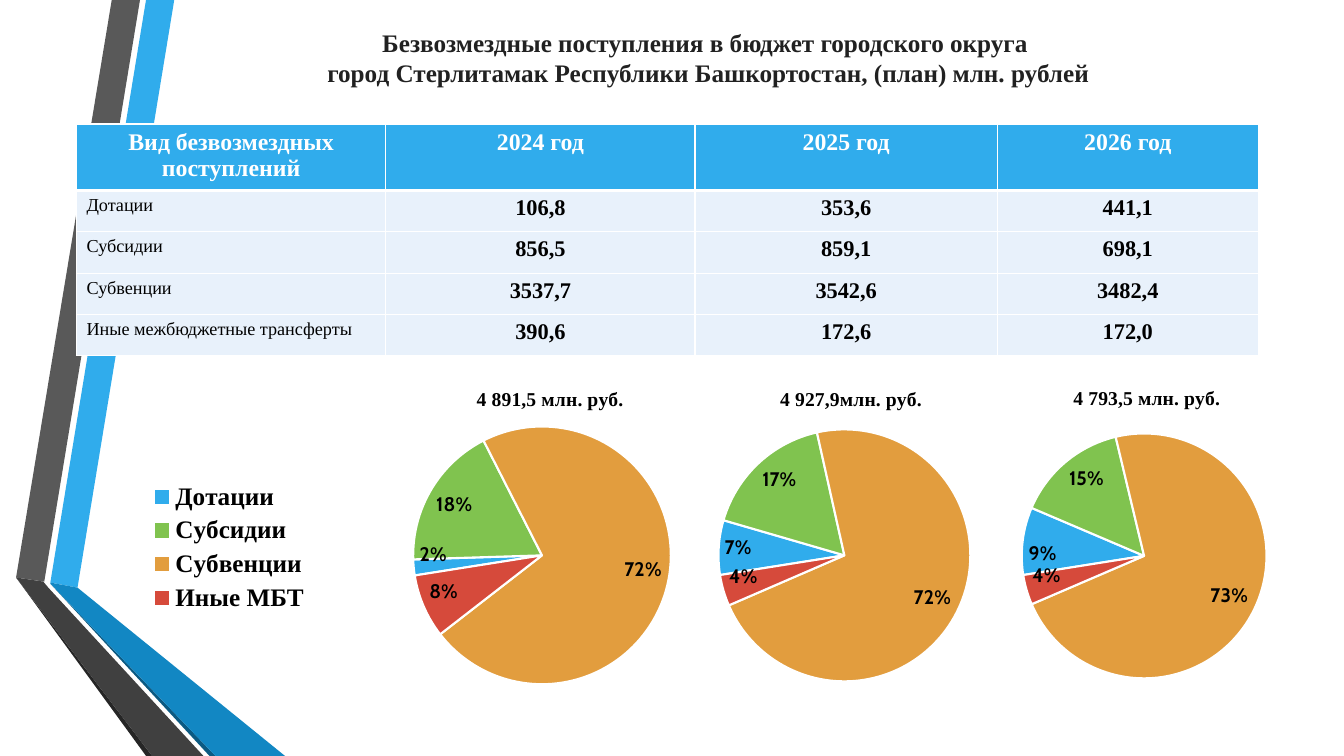
import pptx
import pptx.chart.data
import pptx.dml.color
import pptx.enum.chart
import pptx.enum.text
import pptx.oxml
import pptx.oxml.ns
import pptx.util

Inches = pptx.util.Inches
SERIF = "Times New Roman"
SANS = "Cabin"
COLORS = {
    "white": "FFFFFF", "black": "000000", "title": "212121",
    "blue": "30ACEC", "green": "80C34F", "orange": "E29D3E", "red": "D64A3B",
    "pale": "E8F1FB", "grey": "595959", "dark": "404040", "darkest": "262626",
    "deep_blue": "1287C3", "navy": "0C5A82",
}
SLICES = ["blue", "green", "orange", "red"]
RIBBONS = [
    ("blue", [(0.5, 5.78), (0.77, 5.83), (1.73, 0), (1.45, 0)]),
    ("grey", [(1.39, 0), (1.11, 0), (0.16, 5.73), (0.44, 5.77)]),
    ("darkest", [(0.16, 5.73), (1.45, 7.5), (1.51, 7.5)]),
    ("navy", [(0.5, 5.79), (2.08, 7.5), (2.14, 7.5)]),
    ("deep_blue", [(0.5, 5.79), (2.14, 7.5), (2.83, 7.5), (0.77, 5.83), (0.5, 5.78)]),
    ("dark", [(2.02, 7.5), (0.48, 5.83), (0.43, 5.77), (0.16, 5.73), (1.51, 7.5)]),
]
ROWS = [
    ["Вид безвозмездных поступлений", "2024 год", "2025 год", "2026 год"],
    ["Дотации", "106,8", "353,6", "441,1"],
    ["Субсидии", "856,5", "859,1", "698,1"],
    ["Субвенции", "3537,7", "3542,6", "3482,4"],
    ["Иные межбюджетные трансферты", "390,6", "172,6", "172,0"],
]
NUMBERS = ["1", "2", "3", "4"]
PIES = [
    {"title": "4 891,5 млн. руб.", "shares": [2, 18, 72, 8],
     "names": ["Дотации", "Субсидии", "Субвенции", "Иные МБТ"],
     "frame": (0.76, 3.75, 6.54, 3.73), "plot": (4.1, 4.23, 2.56, 2.56),
     "heading": (4.7, 3.8), "legend": (1.45, 4.73, 1.65, 1.4)},
    {"title": "4 927,9млн. руб.", "shares": [7, 17, 72, 4], "names": NUMBERS,
     "frame": (6.75, 3.67, 3.26, 3.24), "plot": (7.13, 4.26, 2.5, 2.5),
     "heading": (7.71, 3.8)},
    {"title": "4 793,5 млн. руб.", "shares": [9, 15, 73, 4], "names": NUMBERS,
     "frame": (9.66, 3.71, 3.39, 3.16), "plot": (10.14, 4.3, 2.43, 2.43),
     "heading": (10.62, 3.79)},
]


class SlideBuilder:
    def __init__(self, deck):
        self.page = deck.slides.add_slide(deck.slide_layouts[5])

    def color(self, name):
        return pptx.dml.color.RGBColor.from_string(COLORS[name])

    def paint(self, fill, name):
        fill.solid()
        fill.fore_color.rgb = self.color(name)

    def style(self, font, size, color="black", bold=True, face=SERIF):
        font.name = face
        font.size = pptx.util.Pt(size)
        font.bold = bold
        font.color.rgb = self.color(color)

    def title(self, text, frame):
        box = self.page.shapes.title
        box.left, box.top, box.width, box.height = map(Inches, frame)
        text_frame = box.text_frame
        text_frame.text = text
        text_frame.word_wrap = True
        text_frame.auto_size = pptx.enum.text.MSO_AUTO_SIZE.NONE
        text_frame.vertical_anchor = pptx.enum.text.MSO_ANCHOR.MIDDLE
        para = text_frame.paragraphs[0]
        para.alignment = pptx.enum.text.PP_ALIGN.CENTER
        for span in para.runs:
            self.style(span.font, 18, "title")

    def ribbon(self, color, points):
        corners = [(Inches(x), Inches(y)) for x, y in points]
        outline = self.page.shapes.build_freeform(*corners[0])
        outline.add_line_segments(corners[1:])
        shape = outline.convert_to_shape()
        shape.shadow.inherit = False
        self.paint(shape.fill, color)
        shape.line.fill.background()

    def borders(self, cell, bottom):
        properties = cell._tc.get_or_add_tcPr()
        for index, side in enumerate(["lnL", "lnR", "lnT", "lnB"]):
            points = bottom if side == "lnB" else 1
            properties.insert(index, pptx.oxml.parse_xml(
                f'<a:{side} {pptx.oxml.ns.nsdecls("a")} w="{pptx.util.Pt(points)}">'
                f'<a:solidFill><a:srgbClr val="{COLORS["white"]}"/></a:solidFill></a:{side}>'))

    def table(self, rows, frame, widths, heights):
        table = self.page.shapes.add_table(
            len(rows), len(widths), *map(Inches, frame)).table
        for column, width in zip(table.columns, widths):
            column.width = Inches(width)
        for row, height in zip(table.rows, heights):
            row.height = Inches(height)
        for r, texts in enumerate(rows):
            for c, text in enumerate(texts):
                cell = table.cell(r, c)
                header, label = r == 0, r > 0 and c == 0
                cell.text = text
                para = cell.text_frame.paragraphs[0]
                if not label:
                    para.alignment = pptx.enum.text.PP_ALIGN.CENTER
                size = 17 if header else 13 if label else 16
                self.style(para.runs[0].font, size,
                           "white" if header else "black", not label)
                self.paint(cell.fill, "blue" if header else "pale")
                self.borders(cell, 3 if header else 1)

    def place(self, element, index, frame, area, inner=False):
        for layout in element.findall(pptx.oxml.ns.qn("c:layout")):
            element.remove(layout)
        left, top, width, height = frame
        values = [(area[0] - left) / width, (area[1] - top) / height]
        values += [part / whole for part, whole in zip(area[2:], frame[2:])]
        target = '<c:layoutTarget val="inner"/>' if inner else ""
        modes = '<c:xMode val="edge"/><c:yMode val="edge"/>'
        sizes = "".join(f'<c:{tag} val="{value:.3f}"/>' for tag, value in zip("xywh", values))
        element.insert(index, pptx.oxml.parse_xml(
            f'<c:layout {pptx.oxml.ns.nsdecls("c")}><c:manualLayout>'
            f'{target}{modes}{sizes}</c:manualLayout></c:layout>'))

    def pie(self, title, shares, names, frame, plot, heading, legend=None):
        data = pptx.chart.data.CategoryChartData()
        data.categories = names
        data.add_series("Series 1", shares)
        chart = self.page.shapes.add_chart(
            pptx.enum.chart.XL_CHART_TYPE.PIE, *map(Inches, frame), data).chart
        self.style(chart.font, 10, bold=False, face=SANS)
        chart.has_title = True
        chart.chart_title.text_frame.text = title
        self.style(chart.chart_title.text_frame.paragraphs[0].runs[0].font, 14)
        chart.chart_title.include_in_layout = False
        self.place(chart.chart_title._element, 1, frame, heading)
        chart.has_legend = legend is not None
        if legend:
            chart.legend.position = pptx.enum.chart.XL_LEGEND_POSITION.LEFT
            chart.legend.include_in_layout = False
            self.style(chart.legend.font, 18)
            self.place(chart.legend._element, 1, frame, legend)
        pie = chart.plots[0]
        pie.vary_by_categories = True
        pie._element.append(pptx.oxml.parse_xml(
            f'<c:firstSliceAng {pptx.oxml.ns.nsdecls("c")} val="261"/>'))
        self.place(pie._element.getparent(), 0, frame, plot, inner=True)
        series = pie.series[0]
        for index, color in enumerate(SLICES):
            form = series.points[index].format
            self.paint(form.fill, color)
            form.line.color.rgb = self.color("white")
            form.line.width = pptx.util.Pt(1.5)
        labels = series.data_labels
        labels.show_value = True
        labels.number_format = '0"%"'
        labels.number_format_is_linked = False
        labels.position = pptx.enum.chart.XL_LABEL_POSITION.INSIDE_END
        self.style(labels.font, 14, face=SANS)


def main():
    deck = pptx.Presentation()
    deck.slide_width, deck.slide_height = Inches(13.34), Inches(7.5)
    builder = SlideBuilder(deck)
    for color, points in RIBBONS:
        builder.ribbon(color, points)
    builder.title(
        "Безвозмездные поступления в бюджет городского округа \v"
        "город Стерлитамак Республики Башкортостан, (план) млн. рублей",
        (1.39, 0.3, 11.28, 0.54))
    builder.table(ROWS, (0.76, 1.23, 11.73, 2.3),
                  [3.07, 3.07, 3, 2.59], [0.66] + [0.41] * 4)
    for pie in PIES:
        builder.pie(**pie)
    deck.save("out.pptx")


if __name__ == "__main__":
    main()
